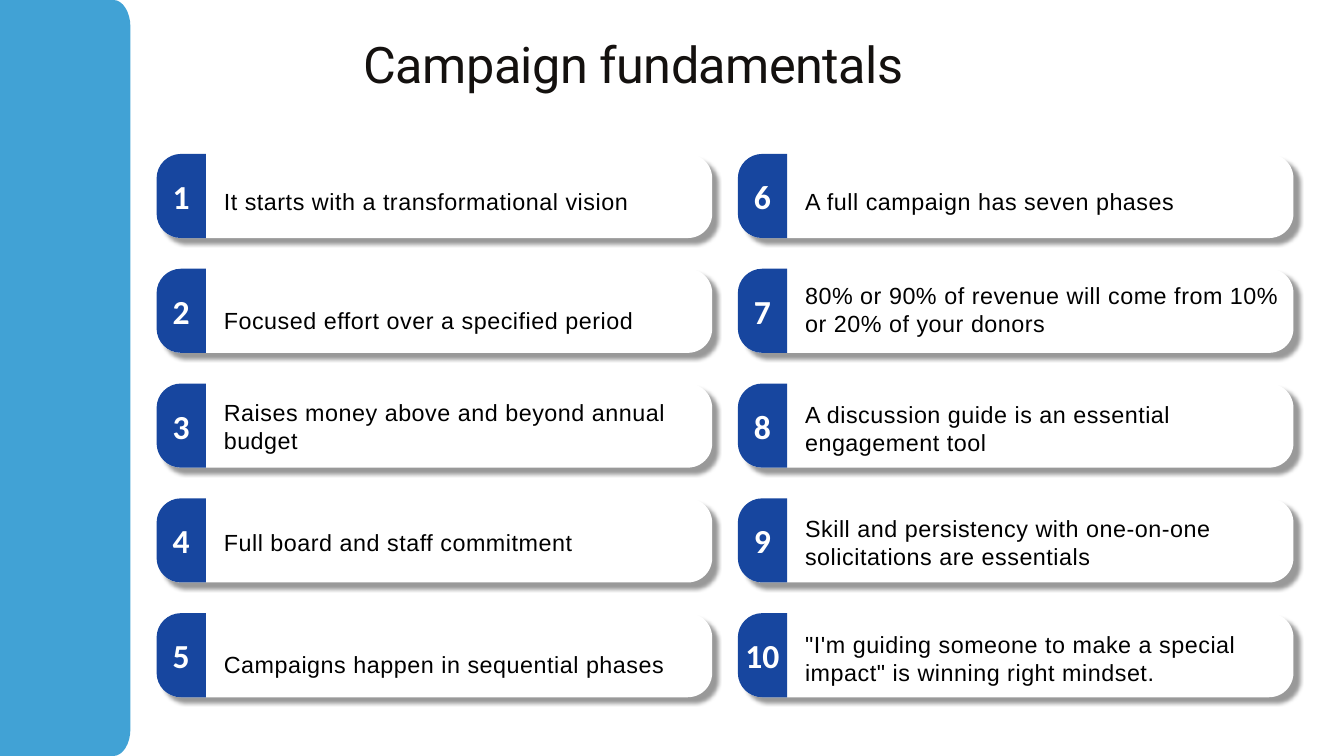
from dataclasses import dataclass

from lxml.etree import SubElement
from pptx import Presentation
from pptx.dml.color import RGBColor
from pptx.enum.shapes import MSO_SHAPE as Preset
from pptx.enum.text import MSO_ANCHOR as Anchor
from pptx.enum.text import MSO_AUTO_SIZE as AutoSize
from pptx.enum.text import PP_ALIGN as Align
from pptx.oxml.ns import qn
from pptx.shapes.base import BaseShape
from pptx.slide import Slide
from pptx.text.text import TextFrame
from pptx.util import Cm, Pt

Point = tuple[float, float]


@dataclass(frozen=True)
class Theme:
    sidebar: str = "41A2D5"
    badge: str = "17469F"
    card: str = "FFFFFF"
    shadow: str = "000000"
    title_color: str = "14110F"
    text_color: str = "000000"
    badge_text: str = "FFFFFF"
    title_size: int = 54
    text_size: int = 25
    badge_size: int = 36


@dataclass(frozen=True)
class Item:
    text: str
    text_offset: float  # from the top of the card, in cm
    lines: int = 1


@dataclass(frozen=True)
class Step:
    """A straight step to a point, or a rounded one around a corner."""
    end: Point
    corner: Point | None = None


THEME = Theme()
ITEMS = [
    Item("It starts with a transformational vision", 0.71),
    Item("Focused effort over a specified period", 0.89),
    Item("Raises money above and beyond annual budget", 0.55, 2),
    Item("Full board and staff commitment", 0.61),
    Item("Campaigns happen in sequential phases", 0.89),
    Item("A full campaign has seven phases", 0.71),
    Item("80% or 90% of revenue will come from 10% or 20% of your donors", 0.46, 2),
    Item("A discussion guide is an essential engagement tool", 0.63, 2),
    Item("Skill and persistency with one-on-one solicitations are essentials", 0.61, 2),
    Item('"I\'m guiding someone to make a special impact" is winning right mindset.', 0.66, 2),
]
ROWS = 5
GRID_LEFT, GRID_TOP = 5.92, 5.82
COLUMN_PITCH, ROW_PITCH = 21.97, 4.34
CARD_WIDTH, CARD_HEIGHT, CORNER = 21.0, 3.18, 0.92
BADGE_WIDTH = 1.86
TEXT_INDENT, TEXT_WIDTH = 2.54, 18.21
ARC = 0.55  # share of the way to the corner that makes a quarter ellipse


def write_text(frame: TextFrame, text: str, *, font: str, size: int, color: str,
               bold: bool = False, align: Align = Align.LEFT, anchor: Anchor = Anchor.TOP,
               line_spacing: float | Pt | None = None, tracking: int = 0, level: int = 0,
               auto_size: AutoSize = AutoSize.NONE) -> None:
    """Fill a frame with one paragraph; tracking is in hundredths of a point."""
    frame.margin_left = frame.margin_right = frame.margin_top = frame.margin_bottom = 0
    frame.word_wrap = True
    frame.auto_size = auto_size
    frame.vertical_anchor = anchor
    paragraph = frame.paragraphs[0]
    paragraph.alignment = align
    paragraph.line_spacing = line_spacing
    if level:
        paragraph.level = level
        paragraph._p.get_or_add_pPr().set("marL", "0")
    run = paragraph.add_run()
    run.text = text
    run.font.name = font
    run.font.size = Pt(size)
    run.font.bold = bold
    run.font.color.rgb = RGBColor.from_string(color)
    if tracking:
        run._r.get_or_add_rPr().set("spc", str(tracking))


def paint(shape: BaseShape, color: str) -> None:
    shape.shadow.inherit = False
    shape.fill.solid()
    shape.fill.fore_color.rgb = RGBColor.from_string(color)
    shape.line.fill.background()


def cast_shadow(shape: BaseShape) -> None:
    effects = shape._element.spPr.find(qn("a:effectLst"))
    shadow = SubElement(effects, qn("a:outerShdw"), blurRad=str(Pt(4)), dist=str(Pt(9)),
                        dir=str(45 * 60000), algn="tl", rotWithShape="0")
    color = SubElement(shadow, qn("a:srgbClr"), val=THEME.shadow)
    SubElement(color, qn("a:alpha"), val="40000")


def add_outline(slide: Slide, start: Point, steps: list[Step], color: str) -> BaseShape:
    """Build a freeform, then bend each step that has a corner into a curve."""
    builder = slide.shapes.build_freeform(Cm(start[0]), Cm(start[1]))
    builder.add_line_segments([(Cm(x), Cm(y)) for x, y in (step.end for step in steps)])
    shape = builder.convert_to_shape()
    outline = next(shape._element.iter(qn("a:path")))
    SubElement(outline, qn("a:close"))
    origin = start
    for segment, step in zip(list(outline)[1:], steps):
        if step.corner:
            segment.tag = qn("a:cubicBezTo")
            for index, anchor in enumerate((origin, step.end)):
                x, y = (a + ARC * (c - a) for a, c in zip(anchor, step.corner))
                control = SubElement(segment, qn("a:pt"), x=str(Cm(x) - shape.left),
                                     y=str(Cm(y) - shape.top))
                segment.insert(index, control)
        origin = step.end
    paint(shape, color)
    return shape


def left_side(left: float, top: float, bottom: float, rx: float, ry: float) -> list[Step]:
    """Go up a left side with two rounded corners."""
    return [Step((left + rx, bottom)), Step((left, bottom - ry), (left, bottom)),
            Step((left, top + ry)), Step((left + rx, top), (left, top))]


def add_sidebar(slide: Slide) -> None:
    left, right, top, bottom, rx, ry = -0.64, 4.93, 0, 28.58, 0.64, 1.02
    steps = left_side(left, top, bottom, rx, ry) + [
        Step((right - rx, top)), Step((right, top + ry), (right, top)),
        Step((right, bottom - ry)), Step((right - rx, bottom), (right, bottom))]
    add_outline(slide, (right - rx, bottom), steps, THEME.sidebar)


def add_badge(slide: Slide, left: float, top: float, number: int) -> None:
    right, bottom = left + BADGE_WIDTH, top + CARD_HEIGHT
    steps = [Step((right, top)), Step((right, bottom)),
             *left_side(left, top, bottom, CORNER, CORNER)]
    badge = add_outline(slide, (left + CORNER, top), steps, THEME.badge)
    write_text(badge.text_frame, str(number), font="Calibri", size=THEME.badge_size,
               color=THEME.badge_text, bold=True, align=Align.CENTER, anchor=Anchor.MIDDLE)


def add_card(slide: Slide, left: float, top: float) -> None:
    card = slide.shapes.add_shape(Preset.ROUNDED_RECTANGLE, Cm(left), Cm(top),
                                  Cm(CARD_WIDTH), Cm(CARD_HEIGHT))
    card.adjustments[0] = CORNER / CARD_HEIGHT
    paint(card, THEME.card)
    cast_shadow(card)


def add_item(slide: Slide, index: int, item: Item) -> None:
    column, row = divmod(index, ROWS)
    left = GRID_LEFT + column * COLUMN_PITCH
    top = GRID_TOP + row * ROW_PITCH
    add_card(slide, left, top)
    add_badge(slide, left, top, index + 1)
    single = item.lines == 1
    box = slide.shapes.add_textbox(Cm(left + TEXT_INDENT), Cm(top + item.text_offset),
                                   Cm(TEXT_WIDTH), Cm(1.4 if single else 2.13))
    write_text(box.text_frame, item.text, font="Arial", size=THEME.text_size,
               color=THEME.text_color, line_spacing=1.5 if single else None,
               tracking=60, level=1, auto_size=AutoSize.SHAPE_TO_FIT_TEXT)


def add_title(slide: Slide, text: str) -> None:
    title = slide.shapes.title
    title.left, title.top, title.width, title.height = Cm(11.18), Cm(0.79), Cm(25.53), Cm(2.57)
    write_text(title.text_frame, text, font="Roboto", size=THEME.title_size,
               color=THEME.title_color, align=Align.CENTER, line_spacing=Pt(78),
               tracking=-60, auto_size=AutoSize.SHAPE_TO_FIT_TEXT)


def main() -> None:
    presentation = Presentation()
    presentation.slide_width, presentation.slide_height = Cm(50.8), Cm(28.58)
    slide = presentation.slides.add_slide(presentation.slide_layouts[5])
    add_sidebar(slide)
    for index, item in enumerate(ITEMS):
        add_item(slide, index, item)
    add_title(slide, "Campaign fundamentals")
    presentation.save("out.pptx")


if __name__ == "__main__":
    main()
